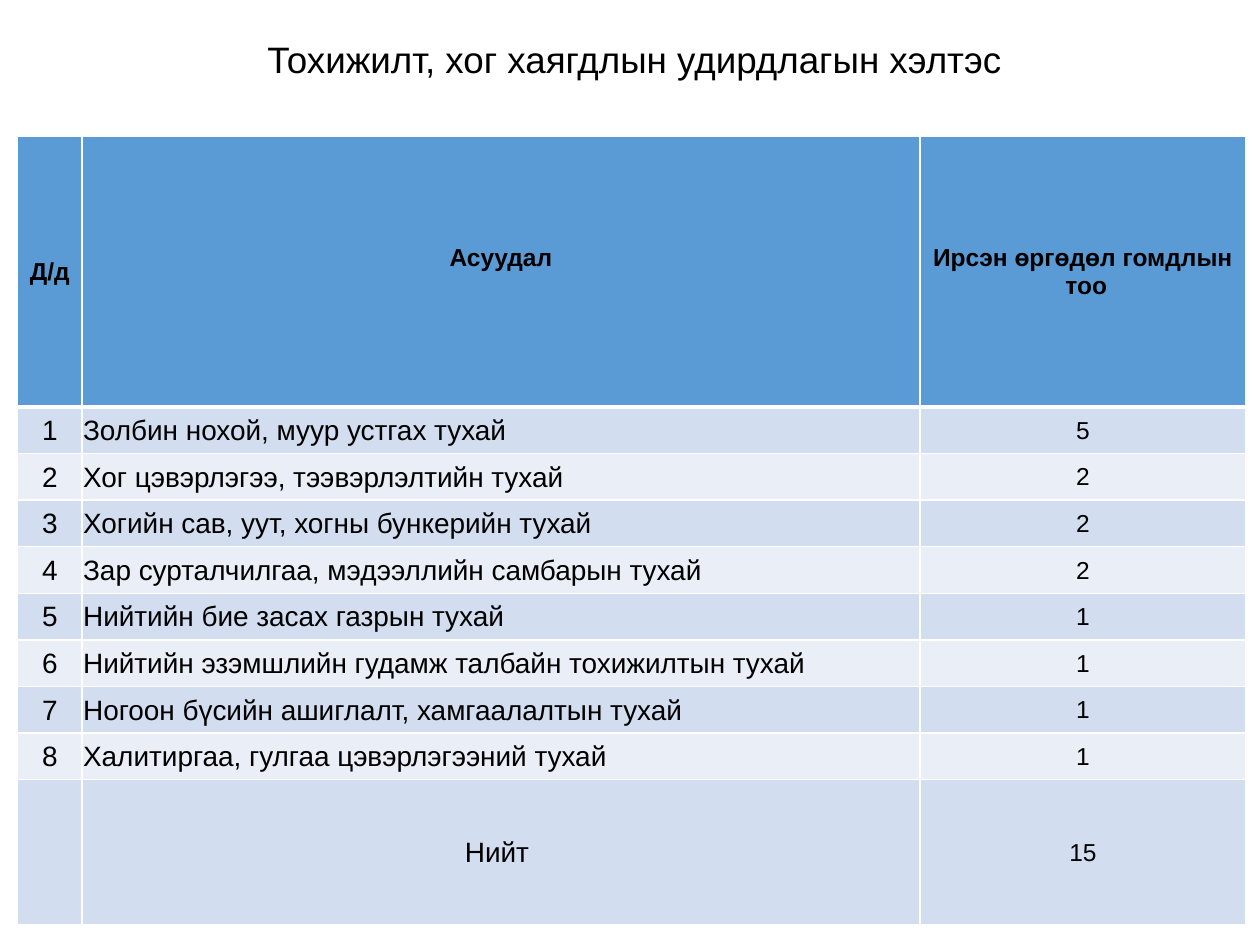
from dataclasses import dataclass

from lxml import etree
from pptx import Presentation
from pptx.dml.color import RGBColor
from pptx.enum.text import MSO_ANCHOR, PP_ALIGN
from pptx.oxml.ns import qn
from pptx.util import Inches, Pt

CENTER, LEFT = PP_ALIGN.CENTER, PP_ALIGN.LEFT
MIDDLE = MSO_ANCHOR.MIDDLE


@dataclass(frozen=True)
class Theme:
    font: str = "Arial"
    ink: str = "000000"
    header: str = "5B9BD5"
    bands: tuple = ("D2DEEF", "EAEFF7")
    border: str = "FFFFFF"
    title_size: int = 21
    issue_size: int = 16
    count_size: int = 14


THEME = Theme()


def write(frame, text, size, align, bold=False):
    """Fill a text frame, one paragraph a line, and format its runs."""
    frame.text = text
    for paragraph in frame.paragraphs:
        paragraph.alignment = align
        paragraph.font.size = Pt(size)
        for run in paragraph.runs:
            run.font.name = THEME.font
            run.font.size = Pt(size)
            run.font.bold = bold
            run.font.color.rgb = RGBColor.from_string(THEME.ink)


def style_cell(cell, fill, bottom_width):
    """Set margins, white borders and fill; borders must precede the fill in the XML."""
    cell.vertical_anchor = MIDDLE
    cell.margin_left = cell.margin_top = cell.margin_right = Inches(0.01)
    cell.margin_bottom = 0
    properties = cell._tc.get_or_add_tcPr()
    for side, width in (("lnL", 1), ("lnR", 1), ("lnT", 1), ("lnB", bottom_width)):
        line = etree.SubElement(properties, qn(f"a:{side}"), w=str(Pt(width)))
        solid = etree.SubElement(line, qn("a:solidFill"))
        etree.SubElement(solid, qn("a:srgbClr"), val=THEME.border)
    cell.fill.solid()
    cell.fill.fore_color.rgb = RGBColor.from_string(fill)


headings = ("Д/д", "Асуудал", "Ирсэн өргөдөл гомдлын\n тоо")
issues = (
    ("Золбин нохой, муур устгах тухай", 5),
    ("Хог цэвэрлэгээ, тээвэрлэлтийн тухай", 2),
    ("Хогийн сав, уут, хогны бункерийн тухай", 2),
    ("Зар сурталчилгаа, мэдээллийн самбарын тухай", 2),
    ("Нийтийн бие засах газрын тухай", 1),
    ("Нийтийн эзэмшлийн гудамж талбайн тохижилтын тухай", 1),
    ("Ногоон бүсийн ашиглалт, хамгаалалтын тухай", 1),
    ("Халитиргаа, гулгаа цэвэрлэгээний тухай", 1),
)
total = sum(count for _, count in issues)
rows = [headings]
rows += [(str(number), issue, str(count)) for number, (issue, count) in enumerate(issues, 1)]
rows.append(("", "Нийт ", str(total)))

column_widths = (0.51, 6.65, 2.59)
row_heights = [2.15] + [0.37] * len(issues) + [1.15]

prs = Presentation()
prs.slide_width, prs.slide_height = Inches(10), Inches(7.5)
slide = prs.slides.add_slide(prs.slide_layouts[6])

title = slide.shapes.add_textbox(Inches(0.14), Inches(0.19), Inches(9.57), Inches(0.59)).text_frame
title.word_wrap = True
title.vertical_anchor = MIDDLE
title.margin_left = Inches(0.32)  # moves the centred title slightly right
write(title, "Тохижилт, хог хаягдлын удирдлагын хэлтэс", THEME.title_size, CENTER)
title.paragraphs[0].line_spacing = 0.9

complaints = slide.shapes.add_table(
    len(rows), len(column_widths), Inches(0.14), Inches(1.08),
    Inches(sum(column_widths)), Inches(sum(row_heights))).table
for column, width in zip(complaints.columns, column_widths):
    column.width = Inches(width)
for row, height in zip(complaints.rows, row_heights):
    row.height = Inches(height)

last_row = len(rows) - 1
for r, values in enumerate(rows):
    is_header = r == 0
    fill = THEME.header if is_header else THEME.bands[(r - 1) % 2]
    for c, value in enumerate(values):
        cell = complaints.cell(r, c)
        style_cell(cell, fill, 3 if is_header else 1)
        size = THEME.count_size if is_header or c == 2 else THEME.issue_size
        align = LEFT if c == 1 and 0 < r < last_row else CENTER
        write(cell.text_frame, value, size, align, is_header)

# The issue heading lines up with the first line of the two-line count heading
complaints.cell(0, 1).margin_bottom = Inches(0.22)

prs.save("out.pptx")
